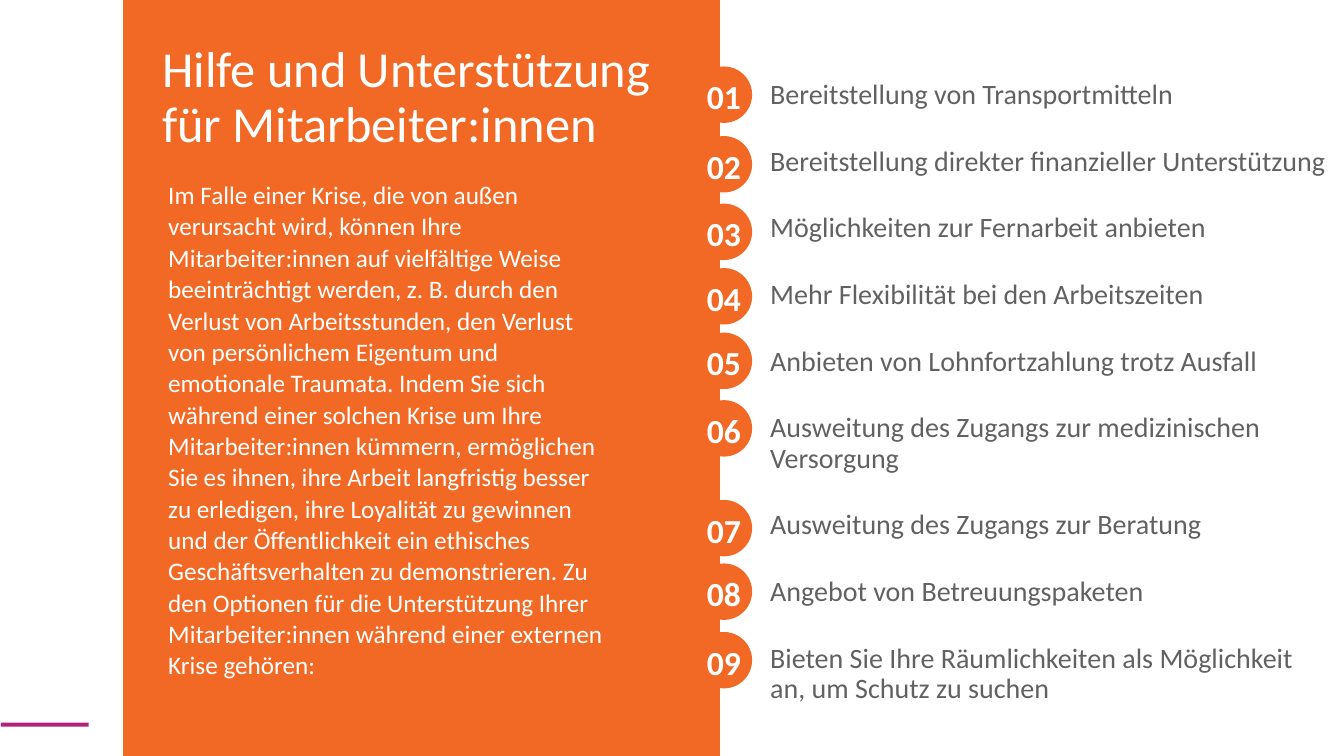
from dataclasses import dataclass

from pptx import Presentation
from pptx.dml.color import RGBColor
from pptx.enum.shapes import MSO_SHAPE
from pptx.enum.text import MSO_ANCHOR, PP_ALIGN
from pptx.util import Inches, Pt

RECTANGLE, OVAL = MSO_SHAPE.RECTANGLE, MSO_SHAPE.OVAL
MIDDLE, CENTER = MSO_ANCHOR.MIDDLE, PP_ALIGN.CENTER


@dataclass(frozen=True)
class Theme:
    font: str = "Calibri"
    orange: RGBColor = RGBColor(0xF1, 0x69, 0x24)
    magenta: RGBColor = RGBColor(0xB4, 0x1F, 0x7A)
    white: RGBColor = RGBColor(0xFF, 0xFF, 0xFF)
    grey: RGBColor = RGBColor(0x61, 0x61, 0x61)
    title: Pt = Pt(36)
    number: Pt = Pt(24)
    option: Pt = Pt(20)
    body: Pt = Pt(18)


theme = Theme()

TITLE = "Hilfe und Unterstützung für Mitarbeiter:innen"
INTRO = (
    "Im Falle einer Krise, die von außen verursacht wird, können Ihre "
    "Mitarbeiter:innen auf vielfältige Weise beeinträchtigt werden, z. B. durch den "
    "Verlust von Arbeitsstunden, den Verlust von persönlichem Eigentum und "
    "emotionale Traumata. Indem Sie sich während einer solchen Krise um Ihre "
    "Mitarbeiter:innen kümmern, ermöglichen Sie es ihnen, ihre Arbeit langfristig "
    "besser zu erledigen, ihre Loyalität zu gewinnen und der Öffentlichkeit ein "
    "ethisches Geschäftsverhalten zu demonstrieren. Zu den Optionen für die "
    "Unterstützung Ihrer Mitarbeiter:innen während einer externen Krise gehören:"
)
# Each option with the top of its numbered badge, in inches
OPTIONS = [
    ("Bereitstellung von Transportmitteln", 0.66),
    ("Bereitstellung direkter finanzieller Unterstützung", 1.35),
    ("Möglichkeiten zur Fernarbeit anbieten", 2.02),
    ("Mehr Flexibilität bei den Arbeitszeiten", 2.66),
    ("Anbieten von Lohnfortzahlung trotz Ausfall", 3.3),
    ("Ausweitung des Zugangs zur medizinischen Versorgung", 3.97),
    ("Ausweitung des Zugangs zur Beratung", 4.96),
    ("Angebot von Betreuungspaketen", 5.59),
    ("Bieten Sie Ihre Räumlichkeiten als Möglichkeit an, um Schutz zu suchen", 6.27),
]

deck = Presentation()
deck.slide_width, deck.slide_height = Inches(13.33), Inches(7.5)
page = deck.slides.add_slide(deck.slide_layouts[6])


def add_filled(kind, left, top, width, height, color):
    shape = page.shapes.add_shape(
        kind, Inches(left), Inches(top), Inches(width), Inches(height))
    shape.shadow.inherit = False
    shape.fill.solid()
    shape.fill.fore_color.rgb = color
    shape.line.fill.background()
    return shape


def add_text(left, top, width, height, texts, size, color, spacing):
    """Add a wrapping text box and return its paragraphs, one per text."""
    box = page.shapes.add_textbox(
        Inches(left), Inches(top), Inches(width), Inches(height))
    frame = box.text_frame
    frame.word_wrap = True
    frame.text = "\n".join(texts)
    for para in frame.paragraphs:
        para.line_spacing = spacing
        para.font.name = theme.font
        para.font.size = size
        para.font.color.rgb = color
    return frame.paragraphs


# Orange panel and magenta accent
add_filled(RECTANGLE, 1.22, 0, 5.92, 7.5, theme.orange)
add_filled(RECTANGLE, 0.01, 7.17, 0.87, 0.04, theme.magenta)

# Title, introduction and options
add_text(1.51, 0.39, 5.16, 1.36, [TITLE], theme.title, theme.white, 0.9)
add_text(1.57, 1.72, 4.62, 5.37, [INTRO], theme.body, theme.white, Pt(22.4))
option_paras = add_text(7.54, 0.75, 5.79, 6.6, [text for text, top in OPTIONS],
                        theme.option, theme.grey, 0.9)
for para in option_paras[1:]:
    para.space_before = Pt(26)

# Numbered badges on the panel's edge
for number, (text, top) in enumerate(OPTIONS, start=1):
    badge = add_filled(OVAL, 6.9, top, 0.56, 0.56, theme.orange)
    frame = badge.text_frame
    frame.word_wrap = False
    frame.vertical_anchor = MIDDLE
    frame.margin_left = frame.margin_right = frame.margin_bottom = 0
    frame.margin_top = Inches(0.03)
    para = frame.paragraphs[0]
    para.text = f"{number:02}"
    para.alignment = CENTER
    para.font.name = theme.font
    para.font.size = theme.number
    para.font.bold = True
    para.font.color.rgb = theme.white

deck.save("out.pptx")
